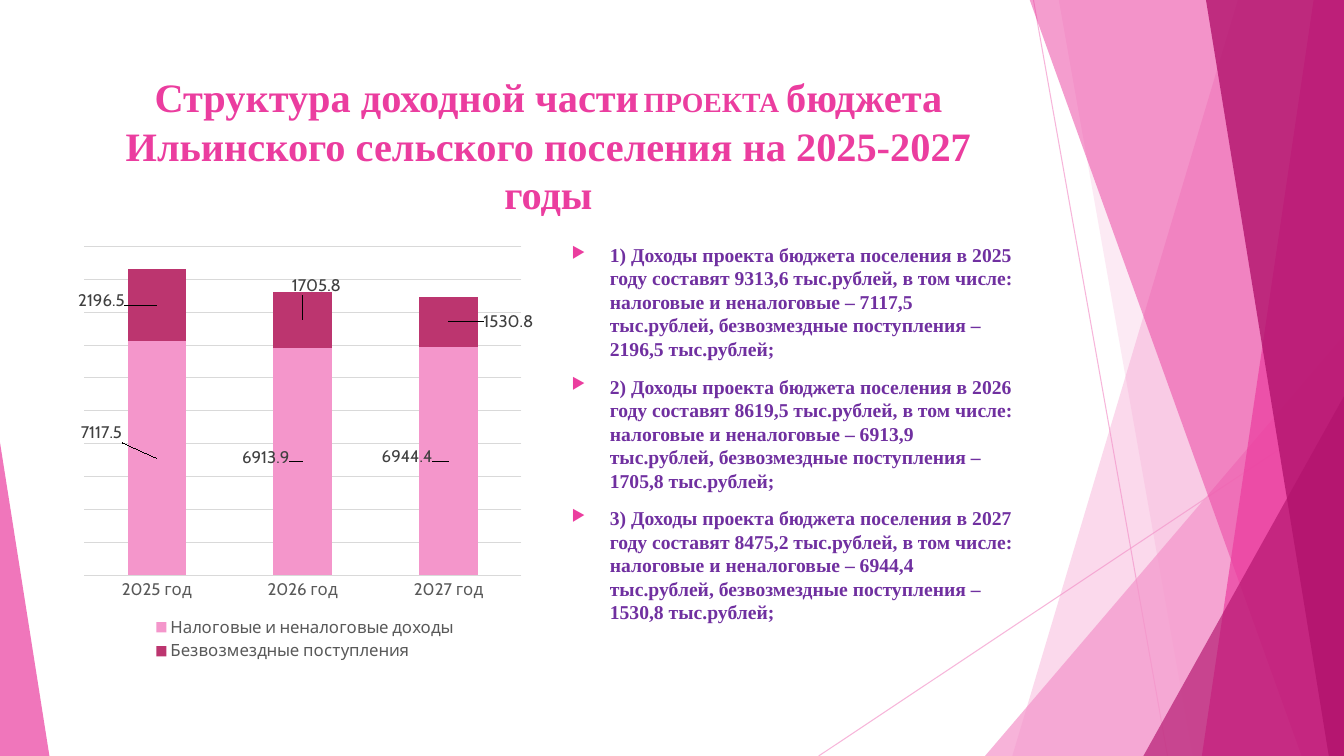
from lxml.etree import SubElement
from pptx import Presentation
from pptx.chart.data import CategoryChartData
from pptx.dml.color import RGBColor
from pptx.enum.chart import XL_CHART_TYPE as ChartType, XL_LEGEND_POSITION as LegendSpot
from pptx.enum.chart import XL_TICK_MARK as TickMark
from pptx.enum.shapes import MSO_CONNECTOR as Connector, MSO_SHAPE as Shape
from pptx.enum.text import MSO_ANCHOR as Anchor, PP_ALIGN as Align
from pptx.oxml import parse_xml
from pptx.oxml.ns import nsdecls, qn
from pptx.util import Pt

PX = 9144
WIDTH, HEIGHT = 1333, 750
LIGHT_PINK = RGBColor(0xF4, 0x96, 0xCB)
PINK = RGBColor(0xEB, 0x3D, 0x9F)
MAGENTA = RGBColor(0xB2, 0x13, 0x6D)
CRIMSON = RGBColor(0xBC, 0x35, 0x6F)
PURPLE = RGBColor(0x70, 0x30, 0xA0)
GRID_GRAY = RGBColor(0xD9, 0xD9, 0xD9)
AXIS_GRAY = RGBColor(0x59, 0x59, 0x59)
LABEL_GRAY = RGBColor(0x40, 0x40, 0x40)

YEARS = ["2025", "2026", "2027"]
TAXES = [7117.5, 6913.9, 6944.4]
GRANTS = [2196.5, 1705.8, 1530.8]
TOTALS = ["9313,6", "8619,5", "8475,2"]
SERIES = [
    ("Налоговые и неналоговые доходы", TAXES, LIGHT_PINK,
     [(-0.12, -0.06), (-0.08, -0.01), (-0.09, -0.01)]),
    ("Безвозмездные поступления", GRANTS, CRIMSON,
     [(-0.12, -0.01), (0.03, -0.08), (0.13, 0)]),
]


def layout_xml(**values):
    parts = "".join(f'<c:{key} val="{value}"/>' for key, value in values.items())
    return parse_xml(f'<c:layout {nsdecls("c")}><c:manualLayout>{parts}</c:manualLayout></c:layout>')


class BudgetSlide:
    serif = "Times New Roman"
    sans = "Cabin"

    def __init__(self, deck):
        self.page = deck.slides.add_slide(deck.slide_layouts[6])
        self.shapes = self.page.shapes

    def set_alpha(self, properties, percent):
        color = next(properties.iter(qn("a:srgbClr")))
        SubElement(color, qn("a:alpha")).set("val", str(percent * 1000))

    def paint(self, shape, color, percent):
        shape.shadow.inherit = False
        shape.fill.solid()
        shape.fill.fore_color.rgb = color
        shape.line.fill.background()
        self.set_alpha(shape._element.spPr, percent)

    def line(self, x1, y1, x2, y2):
        line = self.shapes.add_connector(Connector.STRAIGHT, *(n * PX for n in (x1, y1, x2, y2)))
        line.line.color.rgb = LIGHT_PINK
        line.line.width = Pt(0.75)
        self.set_alpha(line._element.spPr, 70)
        SubElement(line._element.spPr, qn("a:effectLst"))

    def band(self, top_x, bottom_x, color, percent):
        builder = self.shapes.build_freeform(top_x, -1, scale=PX)
        builder.add_line_segments([(WIDTH, -1), (WIDTH, HEIGHT), (bottom_x, HEIGHT)])
        self.paint(builder.convert_to_shape(), color, percent)

    def triangle(self, left, top, width, peak, color, percent):
        box = (left * PX, top * PX, width * PX, (HEIGHT - top) * PX)
        shape = self.shapes.add_shape(Shape.ISOSCELES_TRIANGLE, *box)
        shape.adjustments[0] = peak
        self.paint(shape, color, percent)

    def text_box(self, left, top, width, height):
        box = self.shapes.add_textbox(left * PX, top * PX, width * PX, height * PX)
        box.text_frame.word_wrap = True
        box.text_frame.vertical_anchor = Anchor.TOP
        return box.text_frame

    def add_span(self, para, text, size, color):
        span = para.add_run()
        span.text = text
        self.style(span.font, self.serif, size, color)
        span.font.bold = True

    def style(self, font, name, size, color):
        font.name = name
        font.size = Pt(size)
        font.color.rgb = color

    def title(self, spans, *place):
        para = self.text_box(*place).paragraphs[0]
        para.alignment = Align.CENTER
        for text, size in spans:
            self.add_span(para, text, size, PINK)

    def bullets(self, items, *place):
        frame = self.text_box(*place)
        for index, item in enumerate(items):
            para = frame.add_paragraph() if index else frame.paragraphs[0]
            para.space_before = Pt(10)
            settings = para._p.get_or_add_pPr()
            settings.set("marL", str(38 * PX))
            settings.set("indent", str(-38 * PX))
            color = SubElement(settings, qn("a:buClr"))
            SubElement(color, qn("a:srgbClr")).set("val", str(PINK))
            SubElement(settings, qn("a:buSzPct")).set("val", "80000")
            SubElement(settings, qn("a:buChar")).set("char", "▶")
            self.add_span(para, item, 14, PURPLE)

    def stacked_chart(self, categories, rows, left, top, width, height):
        data = CategoryChartData()
        data.categories = categories
        for name, values, *_ in rows:
            data.add_series(name, values)
        box = (left * PX, top * PX, width * PX, height * PX)
        chart = self.shapes.add_chart(ChartType.COLUMN_STACKED, *box, data).chart
        chart.has_title = False
        chart.font.name = self.sans
        chart.font.size = Pt(10)
        chart.has_legend = True
        chart.legend.position = LegendSpot.BOTTOM
        chart.legend.include_in_layout = False
        self.style(chart.legend.font, self.sans, 12, AXIS_GRAY)

        years = chart.category_axis
        years.major_tick_mark = TickMark.NONE
        years.format.line.fill.background()
        self.style(years.tick_labels.font, self.sans, 12, AXIS_GRAY)
        amounts = chart.value_axis
        amounts.visible = False
        amounts.minimum_scale, amounts.maximum_scale, amounts.major_unit = 0, 10000, 1000
        amounts.major_gridlines.format.line.color.rgb = GRID_GRAY
        amounts.major_gridlines.format.line.width = Pt(0.75)

        plot = chart.plots[0]
        plot.gap_width, plot.overlap, plot.vary_by_categories = 150, 100, False
        for series, (_, _, color, offsets) in zip(plot.series, rows):
            series.format.fill.solid()
            series.format.fill.fore_color.rgb = color
            series.data_labels.show_value = True
            self.style(series.data_labels.font, self.sans, 12, LABEL_GRAY)
            for index, (x, y) in enumerate(offsets):
                self.style(series.points[index].data_label.font, self.sans, 12, LABEL_GRAY)
                label = series._element.xpath("c:dLbls/c:dLbl")[index]
                label.insert(1, layout_xml(x=x, y=y))

        area = chart._chartSpace.xpath("c:chart/c:plotArea")[0]
        for old in area.findall(qn("c:layout")):
            area.remove(old)
        area.insert(0, layout_xml(layoutTarget="inner", xMode="edge", yMode="edge",
                                  x=0.02, y=0.02, w=0.95, h=0.77))


def decimal_comma(value):
    return str(value).replace(".", ",")


def main():
    deck = Presentation()
    deck.slide_width, deck.slide_height = WIDTH * PX, HEIGHT * PX
    slide = BudgetSlide(deck)
    slide.line(1025, 0, 1158, HEIGHT)
    slide.line(WIDTH, 403, 812, HEIGHT)
    slide.band(1228, 1004, LIGHT_PINK, 36)
    slide.band(1050, 1183, LIGHT_PINK, 20)
    slide.triangle(977, 333, 356, 1, LIGHT_PINK, 72)
    slide.band(1021, 1291, PINK, 50)
    slide.band(1303, 1192, PINK, 70)
    slide.band(1196, 1318, MAGENTA, 80)
    slide.triangle(1134, 393, 199, 1, MAGENTA, 66)
    slide.triangle(0, 439, 49, 0, PINK, 70)

    slide.title([
        ("Структура доходной части", 28.8), (" ", 12.6), ("ПРОЕКТА ", 19.8),
        ("бюджета Ильинского сельского поселения на 2025-2027 годы", 28.8),
    ], 74, 67, 940, 144)
    slide.stacked_chart([f"{year} год" for year in YEARS], SERIES, 74, 236, 457, 424)
    slide.bullets([
        f"{number}) Доходы проекта бюджета поселения в {year} году составят {total} тыс.рублей, "
        f"в том числе: налоговые и неналоговые – {decimal_comma(tax)} тыс.рублей, "
        f"безвозмездные поступления – {decimal_comma(grant)} тыс.рублей;"
        for number, (year, total, tax, grant) in enumerate(zip(YEARS, TOTALS, TAXES, GRANTS), 1)
    ], 557, 236, 458, 424)
    deck.save("out.pptx")


if __name__ == "__main__":
    main()
